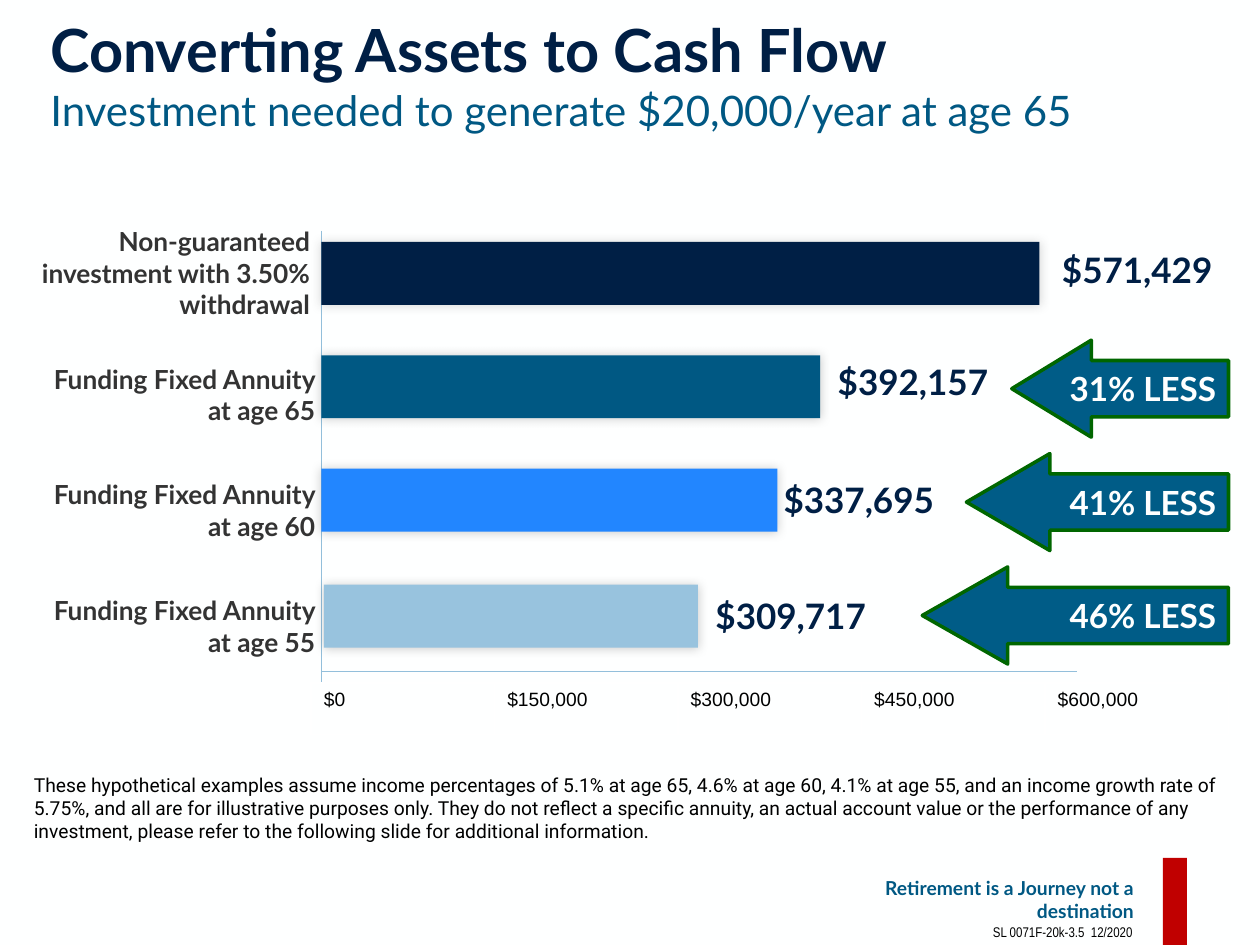
import pptx
import pptx.util
import pptx.dml.color
import pptx.enum.shapes
import pptx.enum.text
import pptx.oxml
import pptx.oxml.ns

PX = 9144
COLORS = {
    "paper": "FEFFFF", "navy": "001F45", "blue": "005883", "arrow": "005C87",
    "green": "006600", "bright": "2286FF", "pale": "98C3DE", "axis": "93BFDB",
    "label": "333333", "black": "000000", "red": "C00000",
}
SHAPE = pptx.enum.shapes.MSO_SHAPE
ALIGN = pptx.enum.text.PP_ALIGN
ANCHOR = pptx.enum.text.MSO_ANCHOR
BAR_H = 50
ARROW_RIGHT = 975
ROWS = [
    dict(label="Non-guaranteed investment with 3.50% withdrawal", label_box=(23, 174, 233, 86),
         bar=(255, 192, 570), color="navy", value="$571,429", value_at=(833, 192)),
    dict(label="Funding Fixed Annuity at age 65", label_box=(17, 283, 243, 61),
         bar=(255, 282, 396), color="blue", value="$392,157", value_at=(655, 281),
         less="31% LESS", arrow=(803, 270), head=0.82),
    dict(label="Funding Fixed Annuity at age 60", label_box=(17, 375, 243, 61),
         bar=(255, 372, 362), color="bright", value="$337,695", value_at=(612, 375),
         less="41% LESS", arrow=(767, 360), head=0.86),
    dict(label="Funding Fixed Annuity at age 55", label_box=(17, 467, 243, 61),
         bar=(257, 464, 297), color="pale", value="$309,717", value_at=(558, 467),
         less="46% LESS", arrow=(732, 450), head=0.88),
]
TICKS = ["$0", "$150,000", "$300,000", "$450,000", "$600,000"]
NOTE = ("These hypothetical examples assume income percentages of 5.1% at age 65, "
        "4.6% at age 60, 4.1% at age 55, and an income growth rate of 5.75%, and all "
        "are for illustrative purposes only. They do not reflect a specific annuity, "
        "an actual account value or the performance of any investment, please refer "
        "to the following slide for additional information.")


def rgb(name):
    return pptx.dml.color.RGBColor.from_string(COLORS[name])


def emu(*lengths):
    return [pptx.util.Emu(n * PX) for n in lengths]


def add_run(p, text, size, color, font="Lato", bold=False):
    r = p.add_run()
    r.text = text
    r.font.size = pptx.util.Pt(size)
    r.font.name = font
    r.font.bold = bold
    r.font.color.rgb = rgb(color)


def set_text(tf, text, align=ALIGN.LEFT, anchor=ANCHOR.TOP, insets=(10, 5, 10, 5), **fmt):
    tf.word_wrap = True
    tf.vertical_anchor = anchor
    tf.margin_left, tf.margin_top, tf.margin_right, tf.margin_bottom = emu(*insets)
    p = tf.paragraphs[0]
    p.alignment = align
    add_run(p, text, **fmt)


def add_text(s, box, text, **fmt):
    set_text(s.shapes.add_textbox(*emu(*box)).text_frame, text, **fmt)


def add_block(s, kind, box, fill):
    sp = s.shapes.add_shape(kind, *emu(*box))
    sp.shadow.inherit = False
    sp.fill.solid()
    sp.fill.fore_color.rgb = rgb(fill)
    sp.line.fill.background()
    return sp


def add_soft_shadow(sp, color):
    effects = sp._element.spPr.find(pptx.oxml.ns.qn("a:effectLst"))
    effects.append(pptx.oxml.parse_xml(
        f'<a:outerShdw {pptx.oxml.ns.nsdecls("a")} blurRad="76200" dist="0" dir="18900000">'
        f'<a:srgbClr val="{COLORS[color]}"><a:alpha val="20000"/></a:srgbClr></a:outerShdw>'))


def add_line(s, x1, y1, x2, y2):
    line = s.shapes.add_connector(pptx.enum.shapes.MSO_CONNECTOR.STRAIGHT, *emu(x1, y1, x2, y2))
    line.line.color.rgb = rgb("axis")
    line.line.width = pptx.util.Pt(0.75)
    line._element.spPr.append(pptx.oxml.parse_xml(
        f'<a:effectLst {pptx.oxml.ns.nsdecls("a")}/>'))


def add_title(s, box):
    title = s.shapes.title
    title.left, title.top, title.width, title.height = emu(*box)
    tf = title.text_frame
    set_text(tf, "Converting Assets to Cash Flow", insets=(0, 0, 0, 0),
             size=34, color="navy", bold=True)
    p = tf.paragraphs[0]
    p.add_line_break()
    add_run(p, "Investment needed to generate $20,000/year at age 65", 24, "blue")


def add_axes(s, left, top, width, height):
    base = top + height
    add_line(s, left, top, left, base + 9)
    add_line(s, left, base, left + width, base)
    frame = s.shapes.add_table(1, len(TICKS), *emu(left - 8, base + 9, 728, 41))
    table = frame.table
    table.first_row = table.horz_banding = False
    for cell, tick in zip(table.rows[0].cells, TICKS):
        cell.fill.solid()
        cell.fill.fore_color.rgb = rgb("paper")
        add_run(cell.text_frame.paragraphs[0], tick, 11, "black", font="Arial")


def add_arrow(s, left, top, head, text):
    sp = add_block(s, SHAPE.LEFT_ARROW, (left, top, ARROW_RIGHT - left, 77), "arrow")
    sp.adjustments[0], sp.adjustments[1] = 0.58, head
    sp.line.color.rgb = rgb("green")
    sp.line.width = pptx.util.Pt(2)
    set_text(sp.text_frame, text, align=ALIGN.RIGHT, anchor=ANCHOR.MIDDLE,
             insets=(0, 5, 10, 5), size=19, color="paper", bold=True)


def add_row(s, row):
    add_text(s, row["label_box"], row["label"], align=ALIGN.RIGHT,
             size=15, color="label", bold=True)
    bar = add_block(s, SHAPE.RECTANGLE, (*row["bar"], BAR_H), row["color"])
    add_soft_shadow(bar, "label" if row["color"] == "navy" else "black")
    add_text(s, (*row["value_at"], 155, 44), row["value"], size=20, color="navy", bold=True)
    if "less" in row:
        add_arrow(s, *row["arrow"], row["head"], row["less"])


def add_footer(s, left, top):
    add_block(s, SHAPE.RECTANGLE, (left + 292, top + 5, 19, 70), "red")
    add_text(s, (left, top, 269, 75), "Retirement is a Journey not a destination",
             align=ALIGN.RIGHT, anchor=ANCHOR.MIDDLE, insets=(0, 0, 0, 0),
             size=11, color="blue", bold=True)
    add_text(s, (left + 134, top + 52, 144, 24), "SL 0071F-20k-3.5  12/2020",
             align=ALIGN.RIGHT, size=8, color="black", font="Arial Narrow")


def main():
    prs = pptx.Presentation()
    prs.slide_width, prs.slide_height = emu(1000, 750)
    s = prs.slides.add_slide(prs.slide_layouts[5])
    s.background.fill.solid()
    s.background.fill.fore_color.rgb = rgb("paper")
    add_title(s, (40, 10, 920, 100))
    add_axes(s, 255, 183, 600, 350)
    for row in ROWS:
        add_row(s, row)
    add_text(s, (17, 609, 975, 47), NOTE, size=11, color="black", font="Roboto")
    add_footer(s, 631, 676)
    prs.save("out.pptx")


if __name__ == "__main__":
    main()
